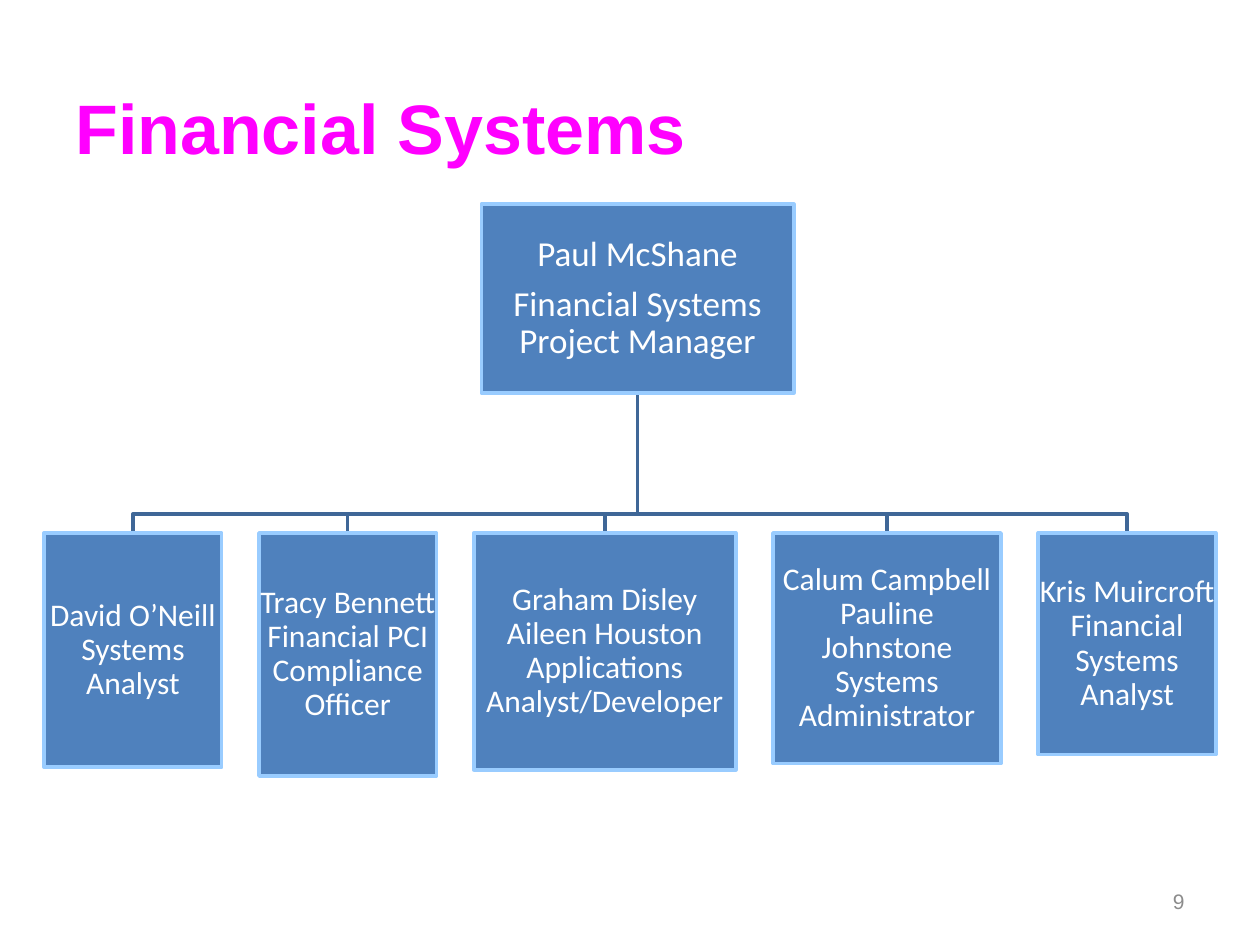
from pptx import Presentation
from pptx.dml.color import RGBColor
from pptx.enum.shapes import MSO_SHAPE
from pptx.enum.text import MSO_ANCHOR as ANCHOR, PP_ALIGN as ALIGN
from pptx.util import Inches, Pt

BOX_FILL, BOX_LINE, LINK = "4F81BD", "99CCFF", "3F6797"
MANAGER = ["Paul McShane", "Financial Systems Project Manager"]
# width, height, text of each box in the lower row
TEAM = [
    (1.41, 1.86, "David O’Neill\vSystems Analyst"),
    (1.41, 1.93, "Tracy Bennett Financial PCI Compliance Officer"),
    (2.08, 1.88, "Graham Disley\vAileen Houston\vApplications Analyst/Developer"),
    (1.81, 1.83, "Calum Campbell Pauline Johnstone Systems Administrator"),
    (1.41, 1.76, "Kris Muircroft Financial Systems Analyst"),
]


def rgb(value):
    return RGBColor.from_string(value)


def set_font(p, name, size, color, bold=False):
    p.font.name, p.font.size, p.font.bold = name, Pt(size), bold
    p.font.color.rgb = rgb(color)


def add_label(slide, box, text, size, color, align, anchor, bold=False):
    tf = slide.shapes.add_textbox(*map(Inches, box)).text_frame
    tf.word_wrap = True
    tf.vertical_anchor = anchor
    p = tf.paragraphs[0]
    p.text = text
    p.alignment = align
    set_font(p, "Arial", size, color, bold)


def add_person_box(slide, box, lines, size):
    sp = slide.shapes.add_shape(MSO_SHAPE.RECTANGLE, *map(Inches, box))
    sp.shadow.inherit = False
    sp.fill.solid()
    sp.fill.fore_color.rgb = rgb(BOX_FILL)
    sp.line.color.rgb = rgb(BOX_LINE)
    sp.line.width = Pt(2)
    tf = sp.text_frame
    tf.word_wrap = True
    tf.vertical_anchor = ANCHOR.MIDDLE
    tf.margin_left = tf.margin_right = tf.margin_top = tf.margin_bottom = Inches(0.01)
    for i, line in enumerate(lines):
        p = tf.add_paragraph() if i else tf.paragraphs[0]
        p.text = line
        p.alignment = ALIGN.CENTER
        p.line_spacing = 0.9
        p.space_after = Pt(size * 0.35)
        set_font(p, "Calibri", size, "FFFFFF")


def add_link(slide, start, end, bend_y):
    """Draw a stepped line that turns sideways at bend_y."""
    (x1, y1), (x2, y2) = start, end
    points = [(x1, bend_y), (x2, bend_y), (x2, y2)]
    builder = slide.shapes.build_freeform(Inches(x1), Inches(y1))
    builder.add_line_segments([(Inches(x), Inches(y)) for x, y in points], close=False)
    sp = builder.convert_to_shape()
    sp.shadow.inherit = False
    sp.fill.background()
    sp.line.color.rgb = rgb(LINK)
    sp.line.width = Pt(2)


def add_org_chart(slide, box):
    left, top, width, _ = box
    row_top = top + 2.61
    gap = (width - sum(w for w, _, _ in TEAM)) / (len(TEAM) - 1)
    manager_box = (left + 3.47, top, 2.48, 1.5)
    start = (manager_box[0] + manager_box[2] / 2, top + manager_box[3])

    members, x = [], left
    for w, h, text in TEAM:
        members.append(((x, row_top, w, h), text))
        x += w + gap

    for (x, y, w, _), _ in members:
        add_link(slide, start, (x + w / 2, y), row_top - 0.15)
    add_person_box(slide, manager_box, MANAGER, 20)
    for member_box, text in members:
        add_person_box(slide, member_box, [text], 18)


def main():
    prs = Presentation()
    prs.slide_width, prs.slide_height = Inches(10), Inches(7.5)
    slide = prs.slides.add_slide(prs.slide_layouts[6])
    add_org_chart(slide, (0.35, 1.62, 9.3, 4.54))
    add_label(slide, (7.17, 6.95, 2.33, 0.4), "9", 12, "8C8C8C",
              ALIGN.RIGHT, ANCHOR.MIDDLE)
    add_label(slide, (0.5, 0.29, 7.01, 1.1), "Financial Systems", 40, "FF00FF",
              ALIGN.LEFT, ANCHOR.BOTTOM, bold=True)
    prs.save("out.pptx")


if __name__ == "__main__":
    main()
